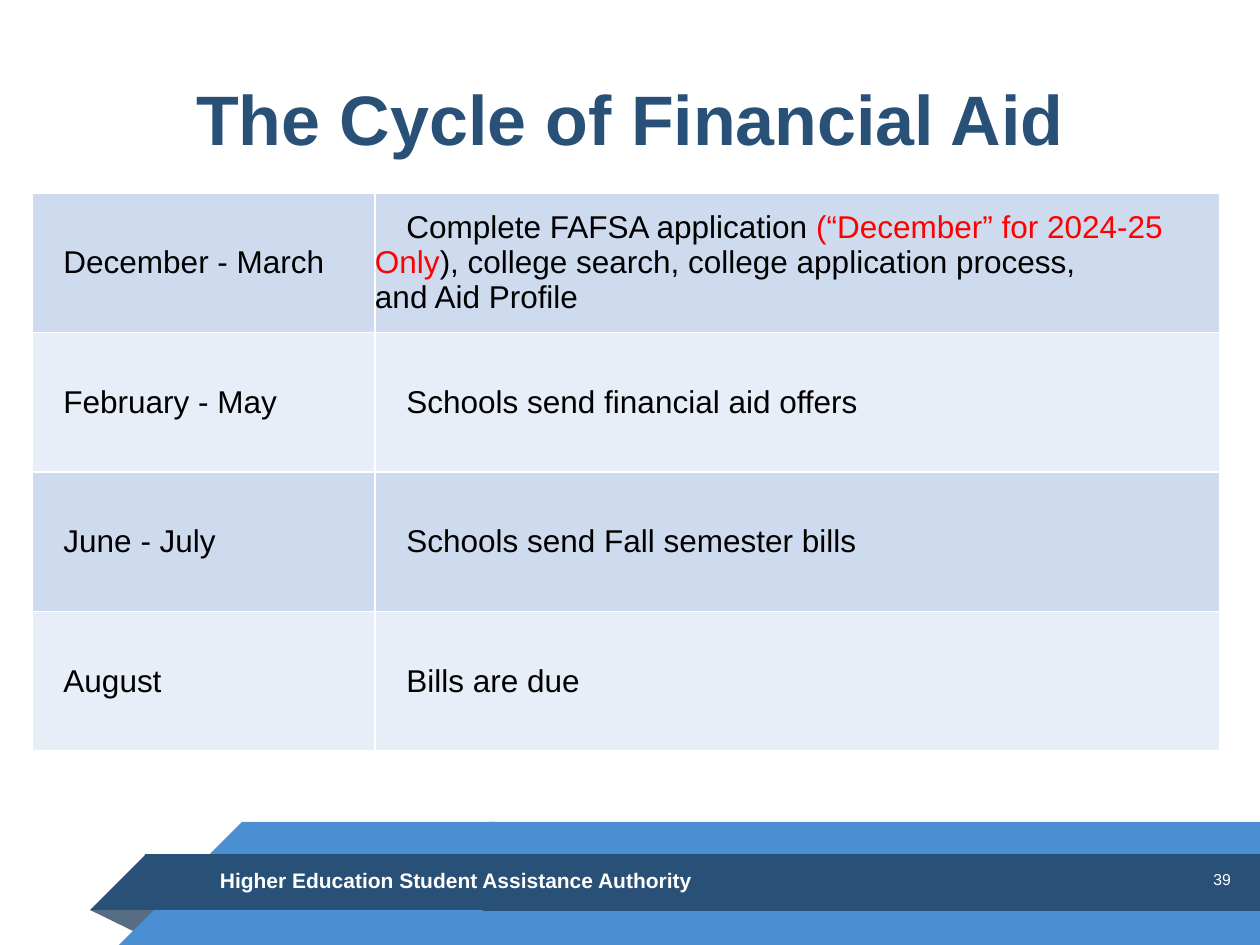
from lxml import etree
from pptx import Presentation
from pptx.dml.color import RGBColor
from pptx.enum.shapes import MSO_SHAPE
from pptx.enum.text import MSO_ANCHOR, MSO_AUTO_SIZE, PP_ALIGN
from pptx.oxml.ns import qn
from pptx.util import Pt

RECT = MSO_SHAPE.RECTANGLE
MIDDLE = MSO_ANCHOR.MIDDLE
NONE, GROW = MSO_AUTO_SIZE.NONE, MSO_AUTO_SIZE.SHAPE_TO_FIT_TEXT
LEFT, CENTER, RIGHT = PP_ALIGN.LEFT, PP_ALIGN.CENTER, PP_ALIGN.RIGHT

SCALE = 914400 / 126
BLUE, NAVY, SLATE = "498FD2", "295076", "576D83"
WHITE, BLACK, RED = "FFFFFF", "000000", "FF0000"
BANDS = ("CEDBEE", "E8EEF7")
COLS, ROW = (343, 845), 139.5

CYCLE = [
    ("December - March", [
        ("Complete FAFSA application ", BLACK),
        ("(“December” for 2024-25 Only", RED),
        ("), college search, college application process, \nand Aid Profile", BLACK),
    ]),
    ("February - May", "Schools send financial aid offers"),
    ("June - July", "Schools send Fall semester bills"),
    ("August", "Bills are due"),
]


def px(n):
    return round(n * SCALE)


def color(code):
    return RGBColor.from_string(code)


def style(item, **values):
    for name, value in values.items():
        setattr(item, name, value)


def paint(shape, code):
    shape.shadow.inherit = False
    shape.fill.solid()
    shape.fill.fore_color.rgb = color(code)
    shape.line.fill.background()


def bar(slide, box, code):
    paint(slide.shapes.add_shape(RECT, *map(px, box)), code)


def wedge(slide, points, code):
    first, *rest = [(px(x), px(y)) for x, y in points]
    path = slide.shapes.build_freeform(*first, scale=1.0)
    path.add_line_segments(rest, close=True)
    paint(path.convert_to_shape(), code)


def write(para, text, size, code, bold=False):
    for i, line in enumerate(text.split("\n")):
        if i:
            para.add_line_break()
        run = para.add_run()
        run.text = line
        style(run.font, name="Arial", size=Pt(size), bold=bold)
        run.font.color.rgb = color(code)


def label(shape, box, text, size, code, align=LEFT, bold=False, wrap=True, fit=GROW):
    places = ("left", "top", "width", "height")
    style(shape, **dict(zip(places, map(px, box))))
    frame = shape.text_frame
    sides = ("left", "top", "right", "bottom")
    style(frame, word_wrap=wrap, auto_size=fit, vertical_anchor=MIDDLE,
          **{f"margin_{side}": px(6) for side in sides})
    para = frame.paragraphs[0]
    para.alignment = align
    write(para, text, size, code, bold)


def edge(cell):
    props = cell._tc.get_or_add_tcPr()
    for side in ("lnL", "lnR", "lnT", "lnB"):
        line = etree.SubElement(props, qn(f"a:{side}"), w=str(Pt(1)))
        fill = etree.SubElement(line, qn("a:solidFill"))
        etree.SubElement(fill, qn("a:srgbClr"), val=WHITE)


def fill_cell(cell, parts, code):
    edge(cell)
    cell.fill.solid()
    cell.fill.fore_color.rgb = color(code)
    style(cell, vertical_anchor=MIDDLE, margin_left=0, margin_right=0,
          margin_top=0, margin_bottom=0)
    para = cell.text_frame.paragraphs[0]
    para.level = 1
    props = para._p.get_or_add_pPr()
    props.set("marL", "0")
    props.set("indent", str(px(31.5)))
    if isinstance(parts, str):
        parts = [(parts, BLACK)]
    for text, tint in parts:
        write(para, text, 18, tint)


def grid(slide):
    count = len(CYCLE)
    box = (32, 193, sum(COLS), ROW * count)
    table = slide.shapes.add_table(count, len(COLS), *map(px, box)).table
    style(table, first_row=False, horz_banding=False)
    for col, width in zip(table.columns, COLS):
        col.width = px(width)
    for r, line in enumerate(CYCLE):
        table.rows[r].height = px(ROW)
        for c, parts in enumerate(line):
            fill_cell(table.cell(r, c), parts, BANDS[r % 2])


def ribbon(slide):
    # Light band behind, with the fold under the dark band
    bar(slide, (489, 822, 771, 123), BLUE)
    wedge(slide, [(163, 910), (139, 934), (90, 910)], SLATE)
    bar(slide, (242, 822, 252, 123), BLUE)
    wedge(slide, [(242, 945), (119, 945), (242, 822)], BLUE)
    # Dark band in front
    bar(slide, (145, 854, 349, 56), NAVY)
    wedge(slide, [(146, 910), (90, 910), (146, 854)], NAVY)
    bar(slide, (483, 854, 777, 57), NAVY)


def main():
    deck = Presentation()
    style(deck, slide_width=px(1260), slide_height=px(945))
    slide = deck.slides.add_slide(deck.slide_layouts[5])
    ribbon(slide)

    # Footer, title and page number
    def note():
        return slide.shapes.add_textbox(0, 0, 0, 0)

    label(note(), (214, 862, 532, 37), "Higher Education Student Assistance Authority",
          12, WHITE, bold=True)
    label(slide.shapes.title, (63, 39, 1134, 158), "The Cycle of Financial Aid",
          40, NAVY, CENTER, bold=True, fit=NONE)
    label(note(), (1206, 864, 31, 31), "39", 9, WHITE, RIGHT, wrap=False)

    # Calendar table
    grid(slide)
    deck.save("out.pptx")


if __name__ == "__main__":
    main()
